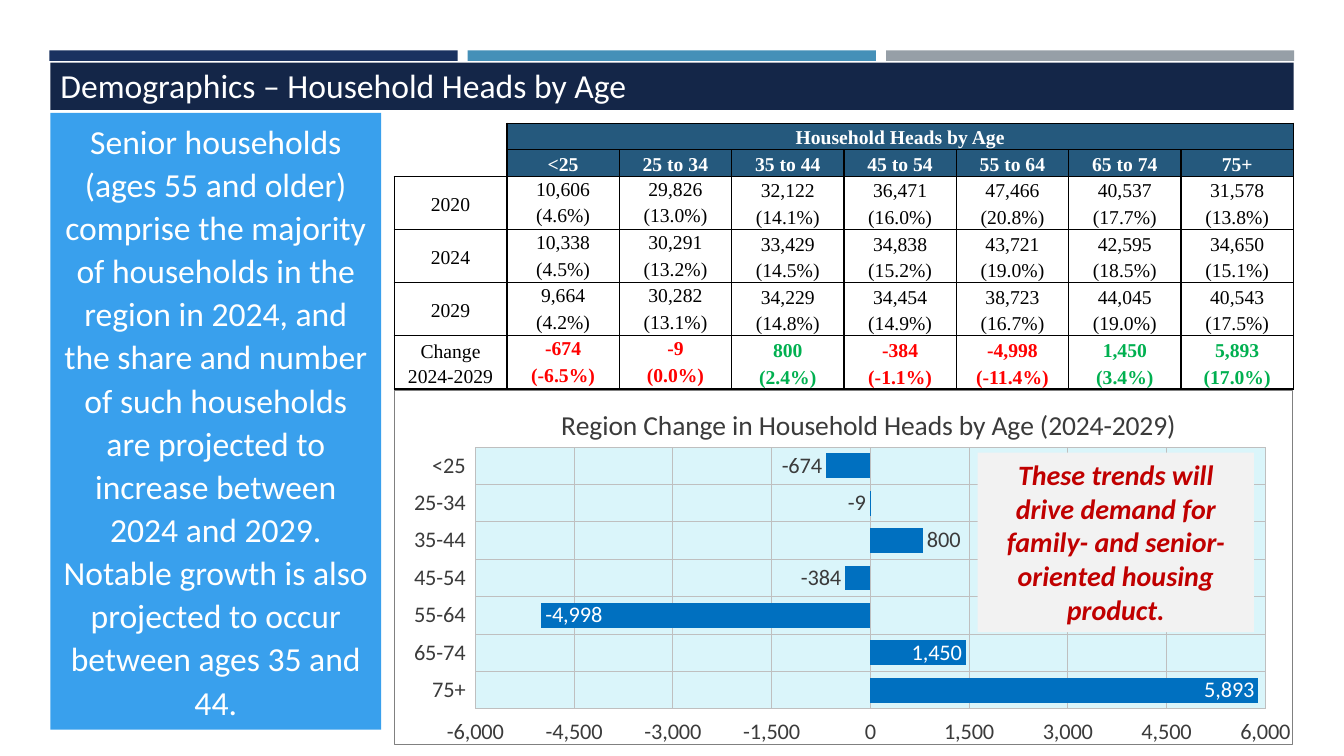
from lxml import etree
from pptx import Presentation
from pptx import util as u
from pptx.chart import data as chart_data
from pptx.dml import color
from pptx.enum import chart as chart_enum
from pptx.enum import shapes, text
from pptx.oxml import ns, parse_xml

COLORS = {
    "white": "FFFFFF", "black": "000000", "navy": "1A3260", "steel": "4590B8",
    "gray": "969FA7", "title": "142648", "panel": "39A0ED", "callout": "F2F2F2",
    "callout_text": "C00000", "header": "25597D", "loss": "FF0000",
    "gain": "00B050", "bar": "0070C0", "chart_text": "3B3B3B",
    "plot": "DAF5FA", "grid": "BFBFBF", "frame": "808080",
}
SANS = "Calibri"
SERIF = "Times New Roman"
AGES = ["<25", "25 to 34", "35 to 44", "45 to 54", "55 to 64", "65 to 74", "75+"]
CHANGES = [-674, -9, 800, -384, -4998, 1450, 5893]
HOUSEHOLDS = [
    ("2020",
     ["10,606", "29,826", "32,122", "36,471", "47,466", "40,537", "31,578"],
     ["(4.6%)", "(13.0%)", "(14.1%)", "(16.0%)", "(20.8%)", "(17.7%)", "(13.8%)"]),
    ("2024",
     ["10,338", "30,291", "33,429", "34,838", "43,721", "42,595", "34,650"],
     ["(4.5%)", "(13.2%)", "(14.5%)", "(15.2%)", "(19.0%)", "(18.5%)", "(15.1%)"]),
    ("2029",
     ["9,664", "30,282", "34,229", "34,454", "38,723", "44,045", "40,543"],
     ["(4.2%)", "(13.1%)", "(14.8%)", "(14.9%)", "(16.7%)", "(19.0%)", "(17.5%)"]),
    ("Change 2024-2029",
     [f"{change:,}" for change in CHANGES],
     ["(-6.5%)", "(0.0%)", "(2.4%)", "(-1.1%)", "(-11.4%)", "(3.4%)", "(17.0%)"]),
]
PANEL_TEXT = (
    "Senior households (ages 55 and older) comprise the majority of households in "
    "the region in 2024, and the share and number of such households are projected "
    "to increase between 2024 and 2029. Notable growth is also projected to occur "
    "between ages 35 and 44."
)
CALLOUT_TEXT = (
    "These trends will drive demand for family- and senior-oriented housing product."
)


def rgb(name):
    return color.RGBColor.from_string(COLORS[name])


def paint(fill, name):
    fill.solid()
    fill.fore_color.rgb = rgb(name)


def style_font(font, size, name, face=SANS, bold=False, italic=False):
    font.size = u.Pt(size)
    font.name = face
    font.bold = bold
    font.italic = italic
    font.color.rgb = rgb(name)


def write(frame, content, align, spacing, size, name, **style):
    frame.text = content
    paragraph = frame.paragraphs[0]
    paragraph.alignment = align
    paragraph.line_spacing = spacing
    style_font(paragraph.runs[0].font, size, name, **style)


def add_box(slide, left, top, width, height, fill):
    shape = slide.shapes.add_shape(
        shapes.MSO_SHAPE.RECTANGLE,
        u.Pt(left), u.Pt(top), u.Pt(width), u.Pt(height))
    shape.shadow.inherit = False
    paint(shape.fill, fill)
    shape.line.fill.background()
    shape.text_frame.word_wrap = True
    shape.text_frame.vertical_anchor = text.MSO_ANCHOR.TOP
    return shape


def format_title(slide):
    title = slide.shapes.title
    title.left, title.top = u.Pt(36), u.Pt(44.8)
    title.width, title.height = u.Pt(888), u.Pt(33.8)
    paint(title.fill, "title")
    frame = title.text_frame
    frame.auto_size = text.MSO_AUTO_SIZE.NONE
    frame.vertical_anchor = text.MSO_ANCHOR.BOTTOM
    write(frame, "Demographics – Household Heads by Age",
          text.PP_ALIGN.LEFT, 0.85, 24, "white")


def add_borders(cell, sides):
    properties = cell._tc.get_or_add_tcPr()
    for side in "LRTB":
        line = etree.SubElement(properties, ns.qn(f"a:ln{side}"), w=str(u.Pt(1)))
        if side in sides:
            fill = etree.SubElement(line, ns.qn("a:solidFill"))
            etree.SubElement(fill, ns.qn("a:srgbClr"), val=COLORS["black"])
        else:
            etree.SubElement(line, ns.qn("a:noFill"))


def prepare_cell(cell, sides, is_header):
    cell.margin_left = cell.margin_right = u.Pt(5)
    cell.margin_top = cell.margin_bottom = 0
    cell.vertical_anchor = text.MSO_ANCHOR.MIDDLE
    paragraph = cell.text_frame.paragraphs[0]
    etree.SubElement(paragraph._p, ns.qn("a:endParaRPr"), sz="1000")
    add_borders(cell, sides)
    if is_header:
        paint(cell.fill, "header")
    else:
        cell.fill.background()


def fill_cell(cell, content, spacing, name, bold):
    write(cell.text_frame, content, text.PP_ALIGN.CENTER, spacing, 14, name,
          face=SERIF, bold=bold)


def add_household_table(slide):
    table = slide.shapes.add_table(
        10, 8, u.Pt(281.5), u.Pt(88), u.Pt(642), u.Pt(190)).table
    table.first_row = table.horz_banding = False
    for index, column in enumerate(table.columns):
        column.width = u.Pt(80.25 if index else 80.6)
    for index, row in enumerate(table.rows):
        row.height = u.Pt(19)
        for position, cell in enumerate(row.cells):
            if index < 2 and position == 0:
                sides = "RB"
            elif index < 2 or position == 0:
                sides = "LRTB"
            else:
                sides = "LRB" if index % 2 else "LRT"
            prepare_cell(cell, sides, index < 2 and position > 0)

    table.cell(0, 0).merge(table.cell(1, 0))
    table.cell(0, 1).merge(table.cell(0, 7))
    fill_cell(table.cell(0, 1), "Household Heads by Age", 1.15, "white", True)
    for position, age in enumerate(AGES, 1):
        fill_cell(table.cell(1, position), age, 1.15, "white", True)
    for group, (label, counts, shares) in enumerate(HOUSEHOLDS):
        top = 2 + 2 * group
        is_change = label.startswith("Change")
        table.cell(top, 0).merge(table.cell(top + 1, 0))
        fill_cell(table.cell(top, 0), label, 1.15, "black", False)
        for position, pair in enumerate(zip(counts, shares), 1):
            name = "black"
            if is_change:
                name = "loss" if CHANGES[position - 1] < 0 else "gain"
            spacing = 1.0 if position < 3 else 1.15
            for offset, content in enumerate(pair):
                fill_cell(table.cell(top + offset, position), content, spacing,
                          name, is_change)


def manual_layout(**values):
    items = "".join(f'<c:{key} val="{value}"/>' for key, value in values.items())
    return parse_xml(f'<c:layout {ns.nsdecls("c")}><c:manualLayout>{items}'
                     '</c:manualLayout></c:layout>')


def area_format(fill, line=None):
    border = "<a:noFill/>"
    if line:
        border = f'<a:solidFill><a:srgbClr val="{COLORS[line]}"/></a:solidFill>'
    return parse_xml(
        f'<c:spPr {ns.nsdecls("c", "a")}><a:solidFill><a:srgbClr val="{COLORS[fill]}"/>'
        f'</a:solidFill><a:ln w="{u.Pt(0.75)}">{border}</a:ln></c:spPr>')


def format_axis(axis):
    axis.has_major_gridlines = True
    axis.major_gridlines.format.line.color.rgb = rgb("grid")
    axis.major_gridlines.format.line.width = u.Pt(0.75)
    axis.major_tick_mark = chart_enum.XL_TICK_MARK.OUTSIDE
    axis.format.line.fill.background()
    style_font(axis.tick_labels.font, 16, "chart_text")


def format_labels(series, values):
    labels = series.data_labels
    labels.show_value = True
    labels.number_format = "#,##0"
    labels.number_format_is_linked = False
    style_font(labels.font, 16, "chart_text")
    positions = chart_enum.XL_LABEL_POSITION
    for index, value in enumerate(values):
        inside = abs(value) > 1000
        label = series.points[index].data_label
        style_font(label.font, 16, "white" if inside else "chart_text")
        label.position = positions.INSIDE_END if inside else positions.OUTSIDE_END


def add_change_chart(slide):
    values = CHANGES[::-1]
    data = chart_data.CategoryChartData(number_format="#,##0")
    data.categories = [age.replace(" to ", "-") for age in AGES[::-1]]
    data.add_series("Series 1", values)
    chart = slide.shapes.add_chart(
        chart_enum.XL_CHART_TYPE.BAR_CLUSTERED,
        u.Pt(281.5), u.Pt(278.6), u.Pt(642), u.Pt(254.2), data).chart
    chart.has_legend = False
    style_font(chart.font, 16, "chart_text")
    write(chart.chart_title.text_frame,
          "Region Change in Household Heads by Age (2024-2029)",
          text.PP_ALIGN.CENTER, 1.0, 19.7, "chart_text")
    title = chart.chart_title._element
    for layout in title.findall(ns.qn("c:layout")):
        title.remove(layout)
    title.find(ns.qn("c:tx")).addnext(
        manual_layout(xMode="edge", yMode="edge", x=0.18, y=0.03))

    format_axis(chart.category_axis)
    format_axis(chart.value_axis)
    chart.category_axis.tick_label_position = chart_enum.XL_TICK_LABEL_POSITION.LOW
    axis = chart.value_axis
    axis.minimum_scale, axis.maximum_scale, axis.major_unit = -6000, 6000, 1500
    axis.tick_labels.number_format = "#,##0"
    axis.tick_labels.number_format_is_linked = False

    plot = chart.plots[0]
    plot.gap_width = 50
    plot.vary_by_categories = False
    series = plot.series[0]
    series.invert_if_negative = False
    paint(series.format.fill, "bar")
    format_labels(series, values)

    chart_part = chart._chartSpace.find(ns.qn("c:chart"))
    chart_part.addnext(area_format("white", "frame"))
    plot_area = chart_part.find(ns.qn("c:plotArea"))
    for layout in plot_area.findall(ns.qn("c:layout")):
        plot_area.remove(layout)
    plot_area.insert(0, manual_layout(
        layoutTarget="inner", xMode="edge", yMode="edge",
        x=0.09, y=0.16, w=0.88, h=0.74))
    plot_area.append(area_format("plot"))


def main():
    presentation = Presentation()
    presentation.slide_width, presentation.slide_height = u.Pt(960), u.Pt(540)
    slide = presentation.slides.add_slide(presentation.slide_layouts[5])
    for index, name in enumerate(["navy", "steel", "gray"]):
        add_box(slide, 35.3 + 298.8 * index, 36, 291.6, 7.5, name)
    format_title(slide)
    add_change_chart(slide)
    panel = add_box(slide, 36, 80.6, 236.2, 440.6, "panel")
    write(panel.text_frame, PANEL_TEXT, text.PP_ALIGN.CENTER, 1.07, 24, "white")
    callout = add_box(slide, 698.4, 323.3, 197.3, 128.2, "callout")
    write(callout.text_frame, CALLOUT_TEXT, text.PP_ALIGN.CENTER, 1.0, 20,
          "callout_text", bold=True, italic=True)
    add_household_table(slide)
    presentation.save("out.pptx")


if __name__ == "__main__":
    main()
